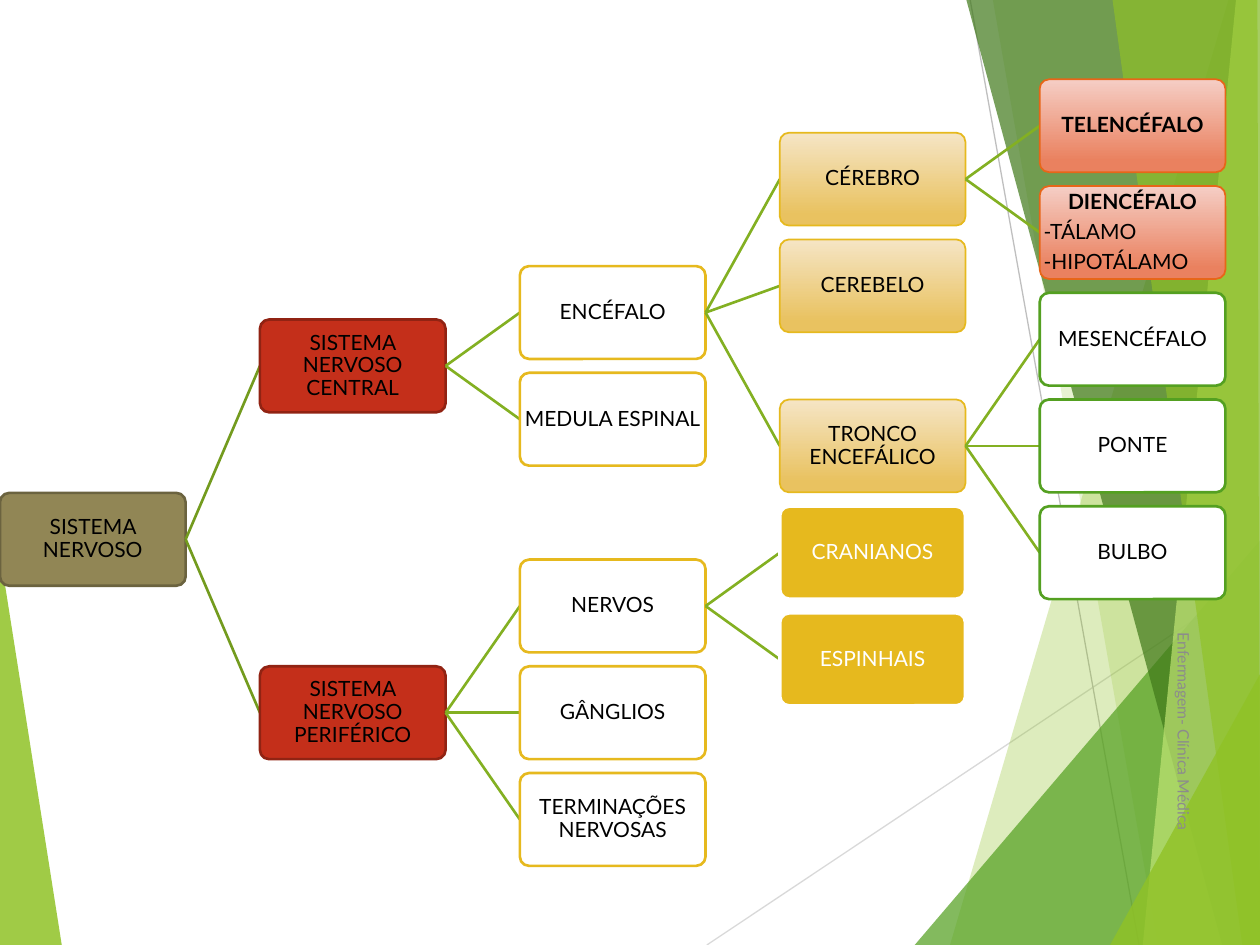
from pptx import Presentation
from pptx.dml.color import RGBColor
from pptx.enum.shapes import MSO_CONNECTOR, MSO_SHAPE
from pptx.enum.text import MSO_ANCHOR, PP_ALIGN
from pptx.oxml.ns import qn
from pptx.util import Inches, Pt
from lxml.etree import SubElement

COLORS = {
    "black": "000000", "white": "FFFFFF", "footer": "8C8C8C",
    "lime": "90C226", "green": "54A021", "forest": "3F7819", "pale": "C0E474",
    "rule": "D9D9D9", "rule_dark": "BFBFBF",
    "branch": "83B022", "trunk": "739B1E",
    "olive": "918655", "olive_edge": "6B633F", "red": "C42F1A", "red_edge": "912313",
    "gold": "E6B91E", "gold_top": "F5E5C5", "gold_low": "E9C260",
    "orange": "E76618", "coral_top": "F5CEC5", "coral_low": "EA815F",
}

BOX_STYLES = {
    "root": (["olive"], "olive_edge", 1.5, "black"),
    "system": (["red"], "red_edge", 1.5, "black"),
    "part": (["white"], "gold", 1.5, "black"),
    "brain": (["gold_top", "gold_low"], "gold", 1, "black"),
    "forebrain": (["coral_top", "coral_low"], "orange", 1, "black"),
    "stem": (["white"], "green", 1.5, "black"),
    "nerve": (["gold"], "white", 2, "white"),
}

BACKDROP = [
    ("lime", 85, [(0, 4.39), (0.49, 7.5), (0, 7.5)]),
    ("lime", 30, [(9.75, 0), (7.54, 7.5), (10, 7.5), (10, 0)]),
    ("lime", 20, [(7.88, 0), (9.19, 7.5), (10, 7.5), (10, 0)]),
    ("green", 72, [(7.26, 7.5), (10, 4.29), (10, 7.5)]),
    ("forest", 70, [(7.67, 0), (9.7, 7.5), (10, 7.5), (10, 0)]),
    ("pale", 70, [(9.81, 0), (9.07, 7.5), (10, 7.5), (10, 0)]),
    ("lime", 65, [(8.83, 0), (9.86, 7.5), (10, 7.5), (9.98, 0)]),
    ("lime", 80, [(8.81, 7.5), (10, 5.35), (10, 7.5)]),
]

TREE = ("SISTEMA NERVOSO", "root", 3.875, [
    ("SISTEMA NERVOSO CENTRAL", "system", 2.25, [
        ("ENCÉFALO", "part", 1.75, [
            ("CÉREBRO", "brain", 0.5, [
                ("TELENCÉFALO", "forebrain", 0, []),
                ("DIENCÉFALO\n-TÁLAMO\n-HIPOTÁLAMO", "forebrain", 1, []),
            ]),
            ("CEREBELO", "brain", 1.5, []),
            ("TRONCO ENCEFÁLICO", "brain", 3, [
                ("MESENCÉFALO", "stem", 2, []),
                ("PONTE", "stem", 3, []),
                ("BULBO", "stem", 4, []),
            ]),
        ]),
        ("MEDULA ESPINAL", "part", 2.75, []),
    ]),
    ("SISTEMA NERVOSO PERIFÉRICO", "system", 5.5, [
        ("NERVOS", "part", 4.5, [
            ("CRANIANOS", "nerve", 4, []),
            ("ESPINHAIS", "nerve", 5, []),
        ]),
        ("GÂNGLIOS", "part", 5.5, []),
        ("TERMINAÇÕES NERVOSAS", "part", 6.5, []),
    ]),
])

BOX_W, BOX_H = 1.474, 0.737
COL_STEP, ROW_STEP, TOP = 2.063, 0.847, 0.63


def rgb(name):
    """Return the named colour."""
    return RGBColor.from_string(COLORS[name])


class Deck:
    """Holds the text style and the current slide."""

    def __init__(self, slide, font="Lato"):
        """Keep the slide and font."""
        self.shapes = slide.shapes
        self.font = font

    def run(self, p, text, size, color, bold=False):
        """Add one styled run."""
        r = p.add_run()
        r.text = text
        r.font.name, r.font.size, r.font.bold = self.font, Pt(size), bold
        r.font.color.rgb = rgb(color)

    def facet(self, color, opacity, points):
        """Draw a translucent polygon."""
        corners = [(Inches(x), Inches(y)) for x, y in points]
        builder = self.shapes.build_freeform(*corners[0])
        builder.add_line_segments(corners[1:], close=True)
        sp = builder.convert_to_shape()
        sp.shadow.inherit = False
        sp.line.fill.background()
        sp.fill.solid()
        sp.fill.fore_color.rgb = rgb(color)
        clr = sp.fill._xPr.find(qn("a:solidFill"))[0]
        SubElement(clr, qn("a:alpha")).set("val", str(opacity * 1000))

    def line(self, start, end, color, width):
        """Draw a straight line."""
        ends = [Inches(v) for v in (*start, *end)]
        cx = self.shapes.add_connector(MSO_CONNECTOR.STRAIGHT, *ends)
        cx.line.color.rgb = rgb(color)
        cx.line.width = Pt(width)
        SubElement(cx._element.spPr, qn("a:effectLst"))

    def box(self, x, y, text, style):
        """Draw a rounded box with its label."""
        fills, edge, width, ink = BOX_STYLES[style]
        sp = self.shapes.add_shape(MSO_SHAPE.ROUNDED_RECTANGLE, Inches(x), Inches(y),
                                   Inches(BOX_W), Inches(BOX_H))
        sp.adjustments[0] = 0.1
        sp.shadow.inherit = False
        if len(fills) == 1:
            sp.fill.solid()
            sp.fill.fore_color.rgb = rgb(fills[0])
        else:
            sp.fill.gradient()
            sp.fill.gradient_angle = 270
            for stop, color, pos in zip(sp.fill.gradient_stops, fills, (0, 0.88)):
                stop.color.rgb, stop.position = rgb(color), pos
        sp.line.color.rgb = rgb(edge)
        sp.line.width = Pt(width)
        tf = sp.text_frame
        tf.word_wrap = True
        tf.vertical_anchor = MSO_ANCHOR.MIDDLE
        tf.margin_left = tf.margin_right = tf.margin_top = tf.margin_bottom = Inches(0.01)
        for i, label in enumerate(text.split("\n")):
            p = tf.add_paragraph() if i else tf.paragraphs[0]
            p.alignment = PP_ALIGN.LEFT if i else PP_ALIGN.CENTER
            p.line_spacing, p.space_after = 0.9, Pt(4.2)
            self.run(p, label, 12, ink, style == "forebrain" and i == 0)

    def branch(self, node, depth=0, origin=None):
        """Draw a node, its link to the parent and its children."""
        text, style, row, children = node
        x, y = depth * COL_STEP, TOP + row * ROW_STEP
        middle = y + BOX_H / 2
        if origin:
            self.line(origin, (x, middle), "trunk" if depth == 1 else "branch", 1.5)
        self.box(x, y, text, style)
        for child in children:
            self.branch(child, depth + 1, (x + BOX_W, middle))

    def side_note(self, x, y, w, h, text):
        """Add a small text turned a quarter."""
        sp = self.shapes.add_textbox(Inches(x), Inches(y), Inches(w), Inches(h))
        sp.rotation = 90
        tf = sp.text_frame
        tf.word_wrap = True
        tf.vertical_anchor = MSO_ANCHOR.MIDDLE
        self.run(tf.paragraphs[0], text, 9, "footer")


def main():
    """Build the nervous system tree."""
    prs = Presentation()
    prs.slide_width, prs.slide_height = Inches(10), Inches(7.5)
    deck = Deck(prs.slides.add_slide(prs.slide_layouts[6]))
    deck.facet(*BACKDROP[0])
    deck.line((5.61, 7.5), (10, 4.57), "rule", 0.75)
    deck.line((7.7, 0), (9.04, 7.5), "rule_dark", 0.75)
    for facet in BACKDROP[1:]:
        deck.facet(*facet)
    deck.branch(TREE)
    deck.side_note(8.38, 5.74, 2.03, 0.4, "Enfermagem- Clínica Médica")
    prs.save("out.pptx")


if __name__ == "__main__":
    main()
